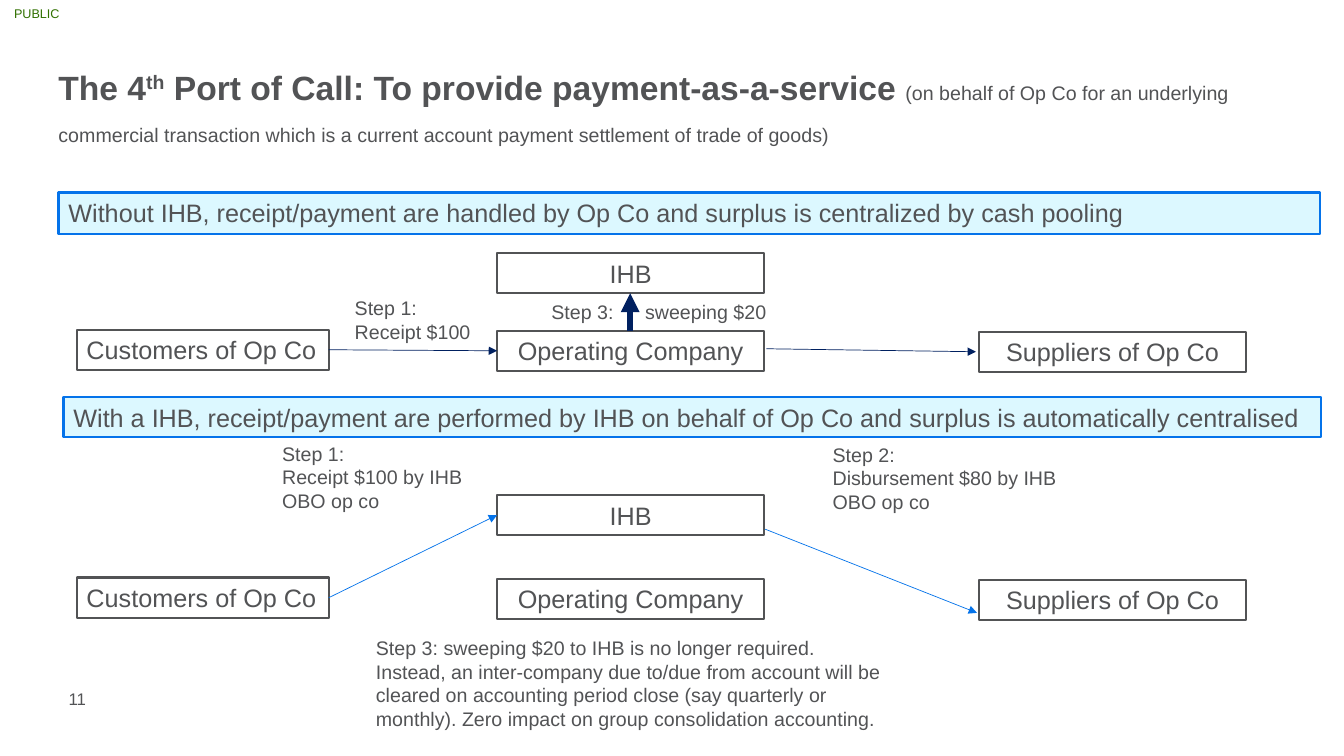
import pptx
import pptx.dml.color
import pptx.enum.shapes
import pptx.enum.text
import pptx.oxml
import pptx.oxml.ns
import pptx.util

GREY = pptx.dml.color.RGBColor(0x52, 0x53, 0x55)
GREEN = pptx.dml.color.RGBColor(0x31, 0x71, 0x00)
BLUE = pptx.dml.color.RGBColor(0x04, 0x73, 0xEA)
NAVY = pptx.dml.color.RGBColor(0x00, 0x20, 0x60)
PALE = pptx.dml.color.RGBColor(0xDC, 0xF8, 0xFF)

LEFT = pptx.enum.text.PP_ALIGN.LEFT
CENTER = pptx.enum.text.PP_ALIGN.CENTER
TOP = pptx.enum.text.MSO_ANCHOR.TOP
MIDDLE = pptx.enum.text.MSO_ANCHOR.MIDDLE


def px(length):
    """One px is a hundredth of an inch."""
    return pptx.util.Emu(length * 9144)


def xml(tag, attributes=""):
    return pptx.oxml.parse_xml(f"<{tag} {attributes} {pptx.oxml.ns.nsdecls('a')}/>")


class SlideBuilder:
    font = "Arial"

    def __init__(self, page):
        self.page = page

    def add_span(self, para, text, size, color=GREY, bold=False, raised=False):
        span = para.add_run()
        span.text = text
        span.font.name = self.font
        span.font.size = pptx.util.Pt(size)
        span.font.bold = bold
        span.font.color.rgb = color
        if raised:
            span.font._element.set("baseline", "30000")

    def frame(self, shape, anchor=TOP, wrap=True, inset=True):
        frame = shape.text_frame
        frame.word_wrap = wrap
        frame.vertical_anchor = anchor
        if not inset:
            frame.margin_left = frame.margin_right = 0
            frame.margin_top = frame.margin_bottom = 0
        return frame

    def text(self, place, lines, size=14, color=GREY, align=LEFT,
             spacing=None, tab=None, **layout):
        box = self.page.shapes.add_textbox(*map(px, place))
        frame = self.frame(box, **layout)
        for index, line in enumerate(lines):
            para = frame.add_paragraph() if index else frame.paragraphs[0]
            para.alignment = align
            if spacing:
                para.line_spacing = pptx.util.Pt(spacing)
            if tab:
                stops = xml("a:tabLst")
                stops.append(xml("a:tab", f'pos="{px(tab)}" algn="l"'))
                para._p.get_or_add_pPr().append(stops)
            # A line is plain text or a list of (text, style) spans
            spans = [(line, {})] if isinstance(line, str) else line
            for words, style in spans:
                self.add_span(para, words, **{"size": size, "color": color, **style})

    def block(self, place, label, align=CENTER, wrap=True, fill=None, line=GREY):
        kind = pptx.enum.shapes.MSO_SHAPE.RECTANGLE
        box = self.page.shapes.add_shape(kind, *map(px, place))
        box.shadow.inherit = False
        if fill is None:
            box.fill.background()
        else:
            box.fill.solid()
            box.fill.fore_color.rgb = fill
        box.line.color.rgb = line
        box.line.width = pptx.util.Pt(1.5)
        para = self.frame(box, wrap=wrap).paragraphs[0]
        para.alignment = align
        self.add_span(para, label, 18)

    def banner(self, place, label):
        self.block(place, label, LEFT, False, PALE, BLUE)

    def arrow(self, start, end, color, width=0.5):
        kind = pptx.enum.shapes.MSO_CONNECTOR.STRAIGHT
        arrow = self.page.shapes.add_connector(kind, *map(px, start + end))
        arrow.line.color.rgb = color
        arrow.line.width = pptx.util.Pt(width)
        arrow.line._get_or_add_ln().append(xml("a:tailEnd", 'type="triangle"'))
        arrow._element.spPr.append(xml("a:effectLst"))


def main():
    deck = pptx.Presentation()
    deck.slide_width, deck.slide_height = px(1333), px(750)
    builder = SlideBuilder(deck.slides.add_slide(deck.slide_layouts[6]))

    # Marking, page number and title
    builder.text((0, 0, 73, 26), ["PUBLIC"], 9, GREEN, CENTER,
                 anchor=MIDDLE, inset=False)
    builder.text((68, 684, 134, 17), ["11"], 12, spacing=14, inset=False)
    heading = {"size": 24, "bold": True}
    builder.text((58, 67, 1223, 75), [[
        ("The 4", heading),
        ("th", {**heading, "raised": True}),
        (" Port of Call: To provide payment-as-a-service ", heading),
        ("(on behalf of Op Co for an underlying commercial transaction which is "
         "a current account payment settlement of trade of goods)", {}),
    ]], spacing=28, inset=False)

    # Banners
    builder.banner((58, 191, 1251, 41), "Without IHB, receipt/payment are handled "
                   "by Op Co and surplus is centralized by cash pooling")
    builder.banner((63, 394, 1247, 40), "With a IHB, receipt/payment are performed "
                   "by IHB on behalf of Op Co and surplus is automatically centralised")

    # Parties, the same in both flows
    for bank_top, party_top in ((251, 327), (491, 573)):
        builder.block((493, bank_top, 265, 40), "IHB")
        builder.block((76, party_top, 250, 40), "Customers of Op Co", LEFT, False)
        builder.block((493, party_top + 1, 265, 40), "Operating Company")
        builder.block((971, party_top + 2, 265, 40), "Suppliers of Op Co")

    # Flow without IHB
    builder.arrow((326, 347), (493, 348), NAVY)
    builder.arrow((760, 346), (968, 349), NAVY)
    builder.arrow((625, 328), (625, 291), NAVY, 4.5)
    builder.text((342, 289, 136, 57), ["Step 1:", "Receipt $100"], wrap=False)
    builder.text((537, 293, 250, 34), ["Step 3:\tsweeping $20"], tab=93)

    # Flow with IHB
    builder.arrow((326, 593), (493, 511), BLUE)
    builder.arrow((759, 525), (969, 608), BLUE)
    builder.text((270, 433, 207, 81), ["Step 1:", "Receipt $100 by IHB OBO op co"])
    builder.text((816, 434, 248, 81),
                 ["Step 2:", "Disbursement $80 by IHB OBO op co"])
    builder.text((363, 626, 522, 104), [
        "Step 3: sweeping $20 to IHB is no longer required. Instead, an "
        "inter-company due to/due from account will be cleared on accounting "
        "period close (say quarterly or monthly). Zero impact on group "
        "consolidation accounting."])

    deck.save("out.pptx")


if __name__ == "__main__":
    main()
